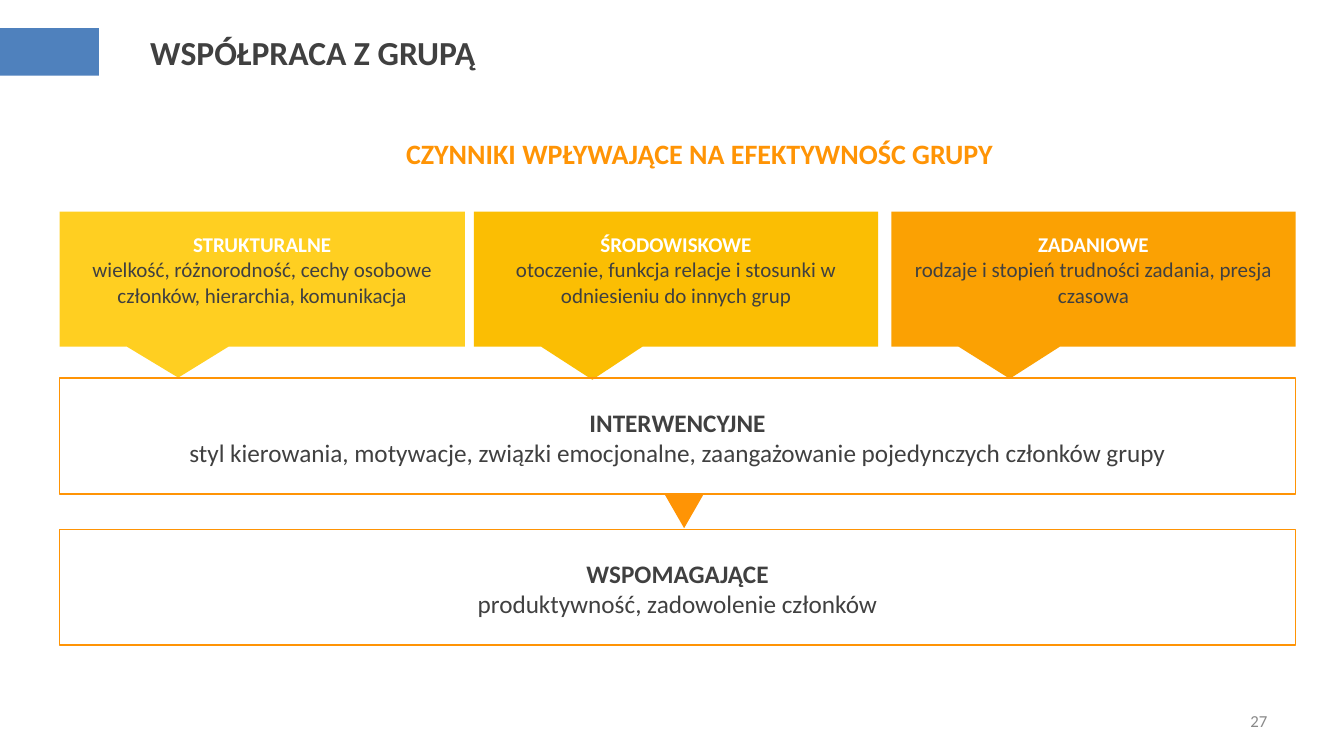
import pptx
import pptx.util
import pptx.dml.color
import pptx.enum.shapes
import pptx.enum.text

Inches = pptx.util.Inches
SHAPE = pptx.enum.shapes.MSO_SHAPE
ALIGN = pptx.enum.text.PP_ALIGN
ANCHOR = pptx.enum.text.MSO_ANCHOR
FIT = pptx.enum.text.MSO_AUTO_SIZE

THEME = {
    "font": "Calibri",
    "blue": "4F81BD", "orange": "FF9405", "dark": "404040",
    "white": "FFFFFF", "grey": "898989",
    "columns": ["FFCF21", "FBBE03", "FBA103"],
    "title": 24, "heading": 20, "row": 18, "column": 15, "number": 12,
}


def write(tf, *lines, size, colors, bolds, align=ALIGN.CENTER,
          anchor=ANCHOR.TOP, fit=FIT.SHAPE_TO_FIT_TEXT):
    """Fill a text frame, one paragraph per line with its colour and weight."""
    tf.word_wrap = True
    tf.auto_size = fit
    tf.vertical_anchor = anchor
    for i, (line, color, bold) in enumerate(zip(lines, colors, bolds)):
        p = tf.paragraphs[0] if i == 0 else tf.add_paragraph()
        p.alignment = align
        r = p.add_run()
        r.text = line
        r.font.name = THEME["font"]
        r.font.size = pptx.util.Pt(THEME[size])
        r.font.bold = bold
        r.font.color.rgb = pptx.dml.color.RGBColor.from_string(THEME[color])


def add_box(kind, x, y, w, h, fill=None, line=None):
    sp = s.shapes.add_shape(kind, Inches(x), Inches(y), Inches(w), Inches(h))
    sp.shadow.inherit = False
    if fill:
        sp.fill.solid()
        sp.fill.fore_color.rgb = pptx.dml.color.RGBColor.from_string(fill)
    else:
        sp.fill.background()
    if line:
        sp.line.color.rgb = pptx.dml.color.RGBColor.from_string(line)
        sp.line.width = pptx.util.Pt(1)
    else:
        sp.line.fill.background()
    return sp


prs = pptx.Presentation()
prs.slide_width, prs.slide_height = Inches(13.33), Inches(7.5)
s = prs.slides.add_slide(prs.slide_layouts[5])
left, width = 0.59, 12.26

# Title bar and title
add_box(SHAPE.RECTANGLE, 0, 0.28, 0.98, 0.47, fill=THEME["blue"])
title = s.shapes.title
title.left, title.top = Inches(1.39), Inches(0.21)
title.width, title.height = Inches(5.99), Inches(0.62)
write(title.text_frame, "WSPÓŁPRACA Z GRUPĄ", size="title", colors=["dark"],
      bolds=[True], align=ALIGN.LEFT, anchor=ANCHOR.MIDDLE, fit=FIT.NONE)

# Heading, indented from the left
tb = s.shapes.add_textbox(Inches(left), Inches(1.31), Inches(width), Inches(0.44))
write(tb.text_frame, "CZYNNIKI WPŁYWAJĄCE NA EFEKTYWNOŚC GRUPY",
      size="heading", colors=["orange"], bolds=[True])
p = tb.text_frame.paragraphs[0]
p.space_after = pptx.util.Pt(18)
p._p.get_or_add_pPr().set("marL", str(Inches(0.44)))

# Three factor callouts: left, width, pointer depth, text margin
columns = [
    (0.59, 4.02, 0.729, 0.15, "STRUKTURALNE",
     "wielkość, różnorodność, cechy osobowe członków, hierarchia, komunikacja"),
    (4.70, 4.01, 0.745, 0.17, "ŚRODOWISKOWE",
     "otoczenie, funkcja relacje i stosunki w odniesieniu do innych grup"),
    (8.84, 4.01, 0.737, 0.12, "ZADANIOWE",
     "rodzaje i stopień trudności zadania, presja czasowa"),
]
for (x, w, depth, margin, name, detail), fill in zip(columns, THEME["columns"]):
    callout = add_box(SHAPE.RECTANGULAR_CALLOUT, x, 2.1, w, 1.34, fill=fill)
    callout.adjustments[0] = -0.207
    callout.adjustments[1] = depth
    tb = s.shapes.add_textbox(Inches(x + margin), Inches(2.25),
                              Inches(w - 2 * margin), Inches(0.86))
    write(tb.text_frame, name, detail, size="column",
          colors=["white", "dark"], bolds=[True, False])

# Two outlined rows
rows = [
    ("INTERWENCYJNE", "styl kierowania, motywacje, związki emocjonalne, "
     "zaangażowanie pojedynczych członków grupy"),
    ("WSPOMAGAJĄCE", "produktywność, zadowolenie członków"),
]
for i, (name, detail) in enumerate(rows):
    y = 3.75 + 1.5 * i
    add_box(SHAPE.RECTANGLE, left, y, width, 1.15, line=THEME["orange"])
    tb = s.shapes.add_textbox(Inches(left), Inches(y + 0.24),
                              Inches(width), Inches(0.71))
    write(tb.text_frame, name, detail, size="row",
          colors=["dark", "dark"], bolds=[True, False])

# Pointer between the rows
pointer = add_box(SHAPE.ISOSCELES_TRIANGLE, 6.59, 4.9, 0.39, 0.34,
                  fill=THEME["orange"])
pointer.rotation = 180

# Slide number
tb = s.shapes.add_textbox(Inches(9.56), Inches(6.95), Inches(3.11), Inches(0.4))
write(tb.text_frame, "27", size="number", colors=["grey"], bolds=[False],
      align=ALIGN.RIGHT, anchor=ANCHOR.MIDDLE, fit=FIT.NONE)

prs.save("out.pptx")
